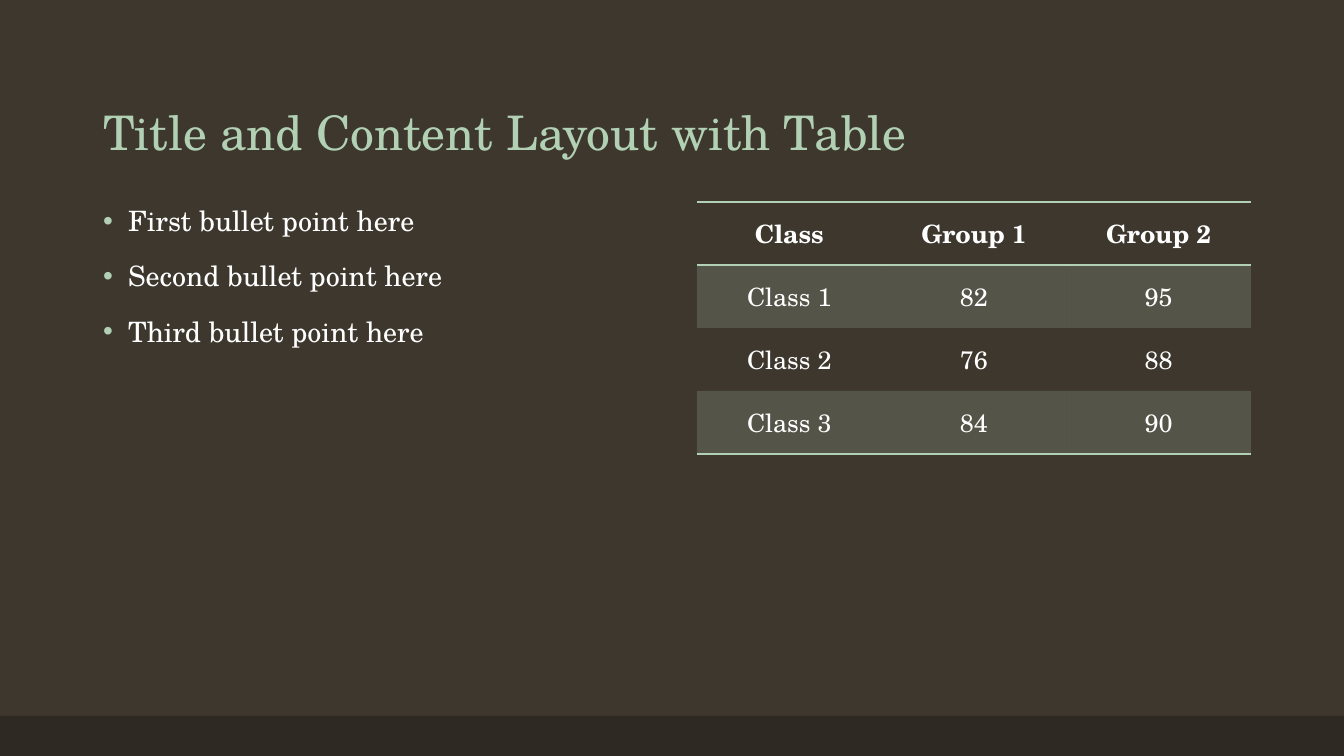
"""Build a slide with a title, a bullet list and a table of class scores."""
from lxml.etree import SubElement as Sub
from pptx import Presentation
from pptx.dml.color import RGBColor as Rgb
from pptx.enum.shapes import MSO_SHAPE as Shape
from pptx.enum.text import MSO_ANCHOR as Anchor, MSO_AUTO_SIZE as Fit, PP_ALIGN as Align
from pptx.oxml.ns import qn
from pptx.util import Pt

TITLE = "Title and Content Layout with Table"
POINTS = ["First bullet point here", "Second bullet point here", "Third bullet point here"]
ROWS = [
    ("Class", "Group 1", "Group 2"),
    ("Class 1", "82", "95"),
    ("Class 2", "76", "88"),
    ("Class 3", "84", "90"),
]
HEX = {"back": "3D372E", "bar": "2E2923", "mint": "B2D0B4", "text": "FFFFFF"}
FONT = "TeX Gyre Schola"
SIZE = (1344, 756)
BOX = {
    "title": (93, 40, 1159, 126),
    "list": (93, 202, 554, 480),
    "table": (697, 202, 554, 252),
    "bar": (0, 716, 1344, 40),
}
INDENT = 25
NO_GRID = "{2D5ABB26-0587-4C30-8999-92F81FD0307C}"


def px(num):
    return round(num * 914400 / 100.8)


def area(name):
    return [px(num) for num in BOX[name]]


def put(item, **values):
    for key, val in values.items():
        setattr(item, key, val)


def paint(fill, name):
    fill.solid()
    fill.fore_color.rgb = Rgb.from_string(HEX[name])


def style(par, size, color, bold=False, **form):
    put(par, **form)
    put(par.font, name=FONT, size=Pt(size), bold=bold)
    par.font.color.rgb = Rgb.from_string(HEX[color])


def place(holder, name, anchor):
    put(holder, **dict(zip(("left", "top", "width", "height"), area(name))))
    put(holder.text_frame, vertical_anchor=anchor, word_wrap=True, auto_size=Fit.NONE)
    return holder.text_frame


def tint(node, name):
    return Sub(node, qn("a:srgbClr"), val=HEX[name])


def bullet(par):
    props = par._p.get_or_add_pPr()
    put_at = {"marL": px(INDENT), "indent": -px(INDENT)}
    for key, val in put_at.items():
        props.set(key, str(val))
    tint(Sub(props, qn("a:buClr")), "mint")
    Sub(props, qn("a:buFont"), typeface="Arial")
    Sub(props, qn("a:buChar"), char="•")


def edge(cell, lines):
    props = cell._tc.get_or_add_tcPr()
    for side, shown in lines.items():
        line = Sub(props, qn("a:ln" + side), w=str(Pt(1)))
        if shown:
            tint(Sub(line, qn("a:solidFill")), "mint")
        else:
            Sub(line, qn("a:noFill"))


def add_grid(shapes):
    grid = shapes.add_table(len(ROWS), len(ROWS[0]), *area("table")).table
    put(grid, horz_banding=False)
    grid._tbl.tblPr.find(qn("a:tableStyleId")).text = NO_GRID
    last = len(ROWS) - 1
    for r, row in enumerate(ROWS):
        for c, word in enumerate(row):
            cell = grid.cell(r, c)
            put(cell, text=word, vertical_anchor=Anchor.MIDDLE)
            style(cell.text_frame.paragraphs[0], 18, "text", r == 0, alignment=Align.CENTER)
            edge(cell, {"L": False, "R": False, "T": r < 2, "B": r in (0, last)})
            if r % 2:
                paint(cell.fill, "mint")
                tone = cell._tc.tcPr.find(qn("a:solidFill"))[0]
                Sub(tone, qn("a:alpha"), val="20000")
            else:
                cell.fill.background()


def main():
    deck = Presentation()
    put(deck, slide_width=px(SIZE[0]), slide_height=px(SIZE[1]))
    slide = deck.slides.add_slide(deck.slide_layouts[1])
    paint(slide.background.fill, "back")

    bar = slide.shapes.add_shape(Shape.RECTANGLE, *area("bar"))
    bar.shadow.inherit = False
    paint(bar.fill, "bar")
    bar.line.fill.background()

    head = place(slide.shapes.title, "title", Anchor.BOTTOM)
    head.text = TITLE
    style(head.paragraphs[0], 34, "mint", alignment=Align.LEFT, line_spacing=0.9)

    body = place(slide.placeholders[1], "list", Anchor.TOP)
    body.text = "\n".join(POINTS)
    for par in body.paragraphs:
        style(par, 20, "text", line_spacing=0.9, space_before=Pt(18))
        bullet(par)

    add_grid(slide.shapes)
    deck.save("out.pptx")


if __name__ == "__main__":
    main()
